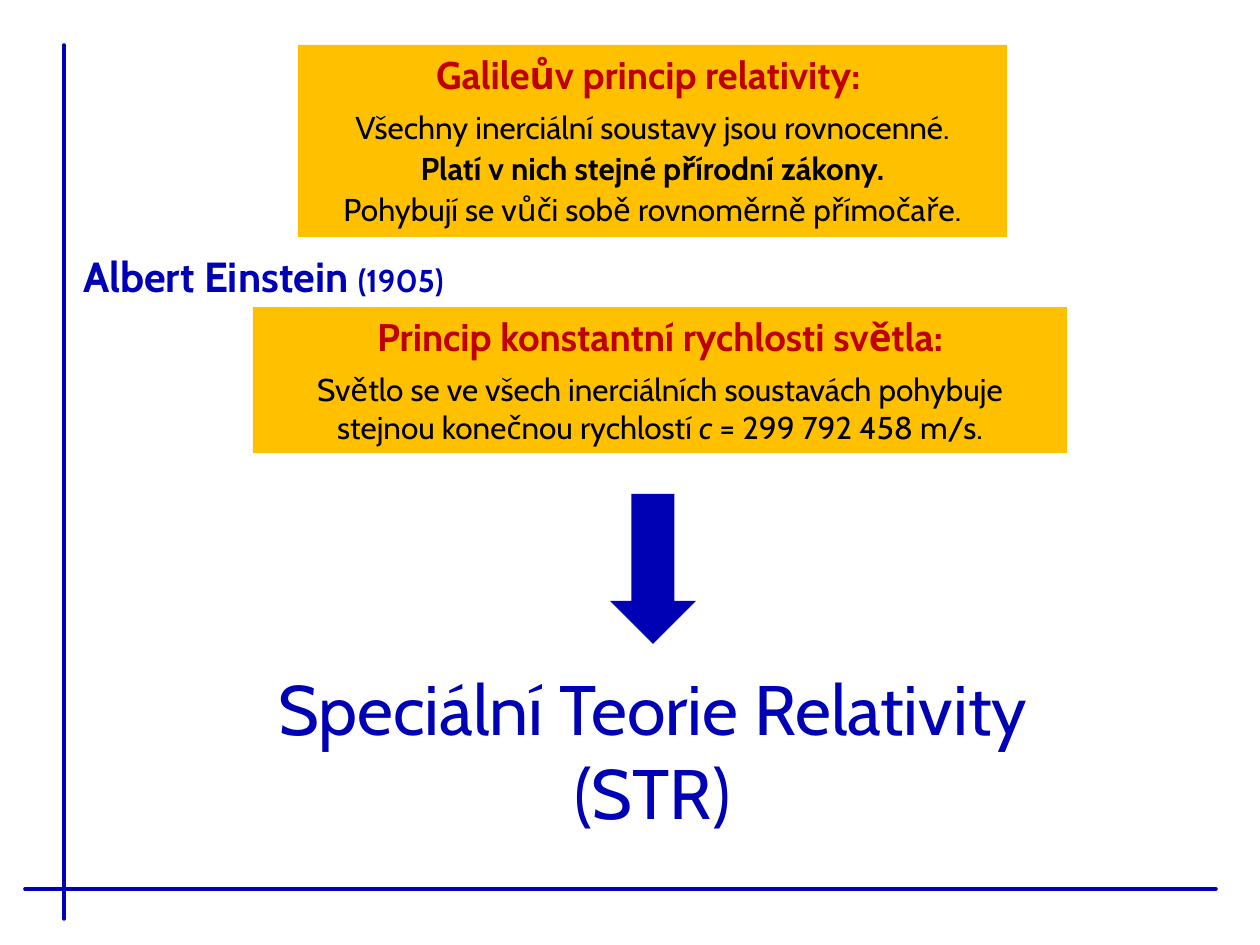
from dataclasses import dataclass

from lxml import etree
from pptx import Presentation
from pptx import util as u
from pptx.dml.color import RGBColor
from pptx.enum import shapes, text
from pptx.oxml.ns import qn

EMU_PER_PX = 914400 / 126
FONT = "Cabin"
BLUE, GOLD, RED, BLACK = "0000B4", "FFC000", "C00000", "000000"
CENTER, LEFT = text.PP_ALIGN.CENTER, text.PP_ALIGN.LEFT


@dataclass(frozen=True)
class Box:
    left: int
    top: int
    width: int
    height: int


@dataclass(frozen=True)
class Run:
    wording: str
    size: int = 18
    color: str = BLACK
    bold: bool = False
    italic: bool = False


@dataclass(frozen=True)
class Line:
    runs: tuple[Run, ...]
    space_after: int = 0
    align: text.PP_ALIGN = CENTER


@dataclass(frozen=True)
class Principle:
    box: Box
    heading: str
    body: tuple[Line, ...]


PRINCIPLES = (
    Principle(Box(298, 45, 709, 192), "Galileův princip relativity: ", (
        Line((Run("Všechny inerciální soustavy jsou rovnocenné."),), 2),
        Line((Run("Platí v nich stejné přírodní zákony.", bold=True),), 2),
        Line((Run("Pohybují se vůči sobě rovnoměrně přímočaře."),), 2),
    )),
    Principle(Box(253, 307, 814, 146), "Princip konstantní rychlosti světla:", (
        Line((
            Run("Světlo se ve všech inerciálních soustavách pohybuje "
                "stejnou konečnou rychlostí "),
            Run("c ", italic=True),
            Run("= 299 792 458 m/s."),
        )),
    )),
)
AUTHOR = Line((Run("Albert Einstein ", 24, BLUE, True),
               Run("(1905)", 18, BLUE, True)), align=LEFT)
THEORY = Line((Run("Speciální Teorie Relativity (STR)", 40, BLUE),))
AXES = ((64, 45, 64, 919), (1216, 889, 25, 889))


def px(length: int) -> u.Emu:
    return u.Emu(round(length * EMU_PER_PX))


def place(box: Box) -> tuple[u.Emu, ...]:
    return px(box.left), px(box.top), px(box.width), px(box.height)


def rgb(color: str) -> RGBColor:
    return RGBColor.from_string(color)


def write_lines(shape, lines: tuple[Line, ...]) -> None:
    frame = shape.text_frame
    frame.word_wrap = True
    frame.auto_size = text.MSO_AUTO_SIZE.SHAPE_TO_FIT_TEXT
    frame.vertical_anchor = text.MSO_ANCHOR.TOP
    for index, line in enumerate(lines):
        paragraph = frame.add_paragraph() if index else frame.paragraphs[0]
        paragraph.alignment = line.align
        paragraph.space_after = u.Pt(line.space_after)
        for part in line.runs:
            run = paragraph.add_run()
            run.text = part.wording
            run.font.name = FONT
            run.font.size = u.Pt(part.size)
            run.font.bold = part.bold
            run.font.italic = part.italic
            run.font.color.rgb = rgb(part.color)


def add_filled(slide, kind: shapes.MSO_SHAPE, box: Box, color: str):
    shape = slide.shapes.add_shape(kind, *place(box))
    shape.shadow.inherit = False
    shape.fill.solid()
    shape.fill.fore_color.rgb = rgb(color)
    shape.line.fill.background()
    return shape


def add_principle(slide, principle: Principle) -> None:
    shape = add_filled(slide, shapes.MSO_SHAPE.RECTANGLE, principle.box, GOLD)
    heading = Line((Run(principle.heading, 22, RED, True),), 6)
    write_lines(shape, (heading, *principle.body))


def add_label(slide, box: Box, line: Line) -> None:
    write_lines(slide.shapes.add_textbox(*place(box)), (line,))


def add_axis(slide, ends: tuple[int, int, int, int]) -> None:
    connector = slide.shapes.add_connector(
        shapes.MSO_CONNECTOR.STRAIGHT, *map(px, ends))
    connector.line.color.rgb = rgb(BLUE)
    connector.line.width = u.Pt(2)
    properties = connector.element.spPr
    properties.find(qn("a:ln")).set("cap", "rnd")
    etree.SubElement(properties, qn("a:effectLst"))


def main() -> None:
    presentation = Presentation()
    presentation.slide_width = u.Inches(10)
    presentation.slide_height = u.Inches(7.5)
    slide = presentation.slides.add_slide(presentation.slide_layouts[6])
    for ends in AXES:
        add_axis(slide, ends)
    galileo, light_speed = PRINCIPLES
    add_principle(slide, galileo)
    add_label(slide, Box(71, 244, 473, 63), AUTHOR)
    add_principle(slide, light_speed)
    add_filled(slide, shapes.MSO_SHAPE.DOWN_ARROW, Box(610, 494, 86, 150), BLUE)
    add_label(slide, Box(192, 659, 921, 183), THEORY)
    presentation.save("out.pptx")


if __name__ == "__main__":
    main()
